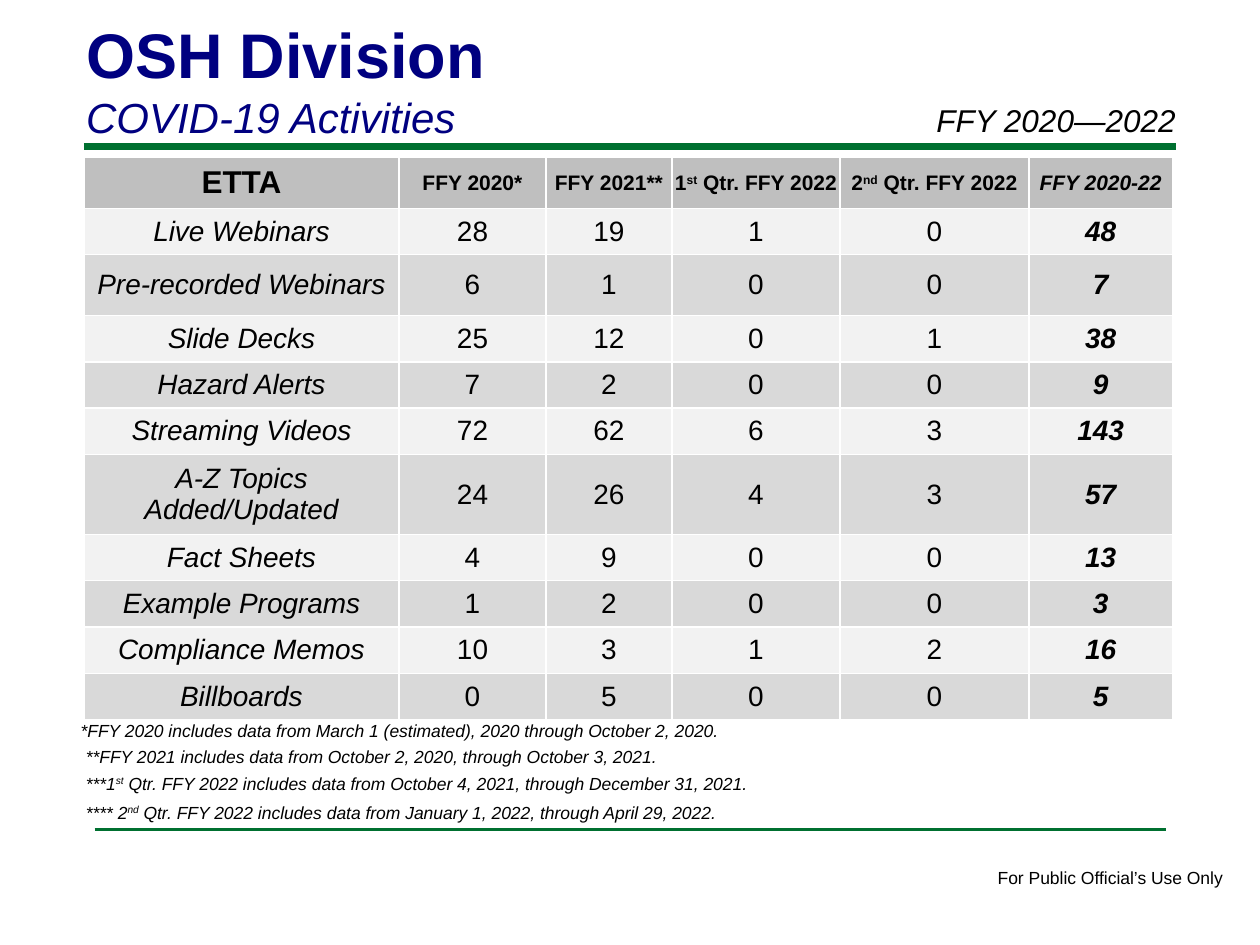
import lxml.etree
import pptx
import pptx.dml.color
import pptx.enum.shapes
import pptx.enum.text
import pptx.oxml.ns
import pptx.util

Pt = pptx.util.Pt
Align = pptx.enum.text.PP_ALIGN
Anchor = pptx.enum.text.MSO_ANCHOR
AutoSize = pptx.enum.text.MSO_AUTO_SIZE

COLORS = {
    "green": "007030",
    "navy": "000080",
    "black": "000000",
    "header": "BFBFBF",
    "light": "F2F2F2",
    "dark": "D9D9D9",
}


def color(name):
    return pptx.dml.color.RGBColor.from_string(COLORS[name])


class SlideBuilder:
    font_name = "Arial"

    def __init__(self, page):
        self.page = page

    def fill_para(self, para, text, size, ink="black", bold=False, italic=False):
        """Fill a paragraph; text between carets is raised."""
        for index, part in enumerate(text.split("^")):
            span = para.add_run()
            span.text = part
            if index % 2:
                span._r.get_or_add_rPr().set("baseline", "30000")
        font = para.font
        font.name, font.size = self.font_name, Pt(size)
        font.bold, font.italic = bold, italic
        font.color.rgb = color(ink)

    def title(self, left, top, width, height, heading, subheading):
        box = self.page.shapes.title
        box.left, box.top, box.width, box.height = map(Pt, (left, top, width, height))
        frame = box.text_frame
        frame.auto_size = AutoSize.NONE
        frame.vertical_anchor = Anchor.BOTTOM
        first, second = frame.paragraphs[0], frame.add_paragraph()
        self.fill_para(first, heading, 36, "navy", bold=True)
        self.fill_para(second, subheading, 24, "navy", italic=True)
        first.alignment = second.alignment = Align.LEFT

    def text(self, left, top, width, height, words, size, italic=True, wrap=True):
        box = self.page.shapes.add_textbox(*map(Pt, (left, top, width, height)))
        box.text_frame.word_wrap = wrap
        self.fill_para(box.text_frame.paragraphs[0], words, size, italic=italic)

    def rule(self, left, right, y, weight):
        line = self.page.shapes.add_connector(
            pptx.enum.shapes.MSO_CONNECTOR.STRAIGHT, Pt(left), Pt(y), Pt(right), Pt(y))
        line.line.color.rgb = color("green")
        line.line.width = Pt(weight)
        lxml.etree.SubElement(line._element.spPr, pptx.oxml.ns.qn("a:effectLst"))

    def cell(self, cell, words, size, fill, bold, italic):
        cell.vertical_anchor = Anchor.MIDDLE
        cell.fill.solid()
        cell.fill.fore_color.rgb = color(fill)
        para = cell.text_frame.paragraphs[0]
        para.alignment = Align.CENTER
        self.fill_para(para, words, size, bold=bold, italic=italic)

    def table(self, left, top, widths, heights, header, records):
        table = self.page.shapes.add_table(
            len(heights), len(widths), Pt(left), Pt(top),
            Pt(sum(widths)), Pt(sum(heights))).table
        for column, width in zip(table.columns, widths):
            column.width = Pt(width)
        for row, height in zip(table.rows, heights):
            row.height = Pt(height)
        last = len(widths) - 1

        # Header row, with narrow margins beside the first cell
        for c, words in enumerate(header):
            cell = table.cell(0, c)
            self.cell(cell, words, 12 if c else 18, "header", True, c == last)
            if c:
                cell.margin_left = cell.margin_right = cell.margin_top = Pt(0.7)
                cell.margin_bottom = Pt(0)

        # Body rows: italic labels, bold italic totals
        for r, record in enumerate(records, start=1):
            fill = "light" if r % 2 else "dark"
            for c, value in enumerate(record):
                self.cell(table.cell(r, c), str(value), 16, fill,
                          c == last, c in (0, last))


def main():
    deck = pptx.Presentation()
    deck.slide_width, deck.slide_height = Pt(720), Pt(540)
    slide = SlideBuilder(deck.slides.add_slide(deck.slide_layouts[5]))

    # Rules and footer
    slide.rule(48, 672, 84, 4)
    slide.rule(54, 666, 474, 2)
    slide.text(563, 492, 145, 19.4, "For Public Official’s Use Only", 10,
               italic=False, wrap=False)

    # Title and period
    slide.title(42, 4.5, 594, 80, "OSH Division", "COVID-19 Activities")
    slide.text(528, 54, 180, 29, "FFY 2020—2022", 18)

    # Activity table; each total is the sum of its row
    header = ["ETTA", "FFY 2020*", "FFY 2021**", "1^st^ Qtr. FFY 2022",
              "2^nd^ Qtr. FFY 2022", "FFY 2020-22"]
    activities = [
        ("Live Webinars", 28, 19, 1, 0),
        ("Pre-recorded Webinars", 6, 1, 0, 0),
        ("Slide Decks", 25, 12, 0, 1),
        ("Hazard Alerts", 7, 2, 0, 0),
        ("Streaming Videos", 72, 62, 6, 3),
        ("A-Z Topics Added/Updated", 24, 26, 4, 3),
        ("Fact Sheets", 4, 9, 0, 0),
        ("Example Programs", 1, 2, 0, 0),
        ("Compliance Memos", 10, 3, 1, 2),
        ("Billboards", 0, 5, 0, 0),
    ]
    records = [(*activity, sum(activity[1:])) for activity in activities]
    tall_rows = {"Pre-recorded Webinars": 34.8, "A-Z Topics Added/Updated": 45}
    heights = [29] + [tall_rows.get(record[0], 26.5) for record in records]
    slide.table(48, 90, [180, 84, 72, 96, 108, 82], heights, header, records)

    # Footnotes
    footnotes = [
        (39, 408, 629, "*FFY 2020 includes data from March 1 (estimated), 2020 "
                       "through October 2, 2020."),
        (42, 423, 629, "**FFY 2021 includes data from October 2, 2020, "
                       "through October 3, 2021."),
        (42, 438, 437, "***1^st^ Qtr. FFY 2022 includes data from October 4, 2021, "
                       "through December 31, 2021."),
        (42, 454.5, 437, "**** 2^nd^ Qtr. FFY 2022 includes data from January 1, 2022, "
                         "through April 29, 2022."),
    ]
    for left, top, width, words in footnotes:
        slide.text(left, top, width, 19.4, words, 10)

    deck.save("out.pptx")


if __name__ == "__main__":
    main()
